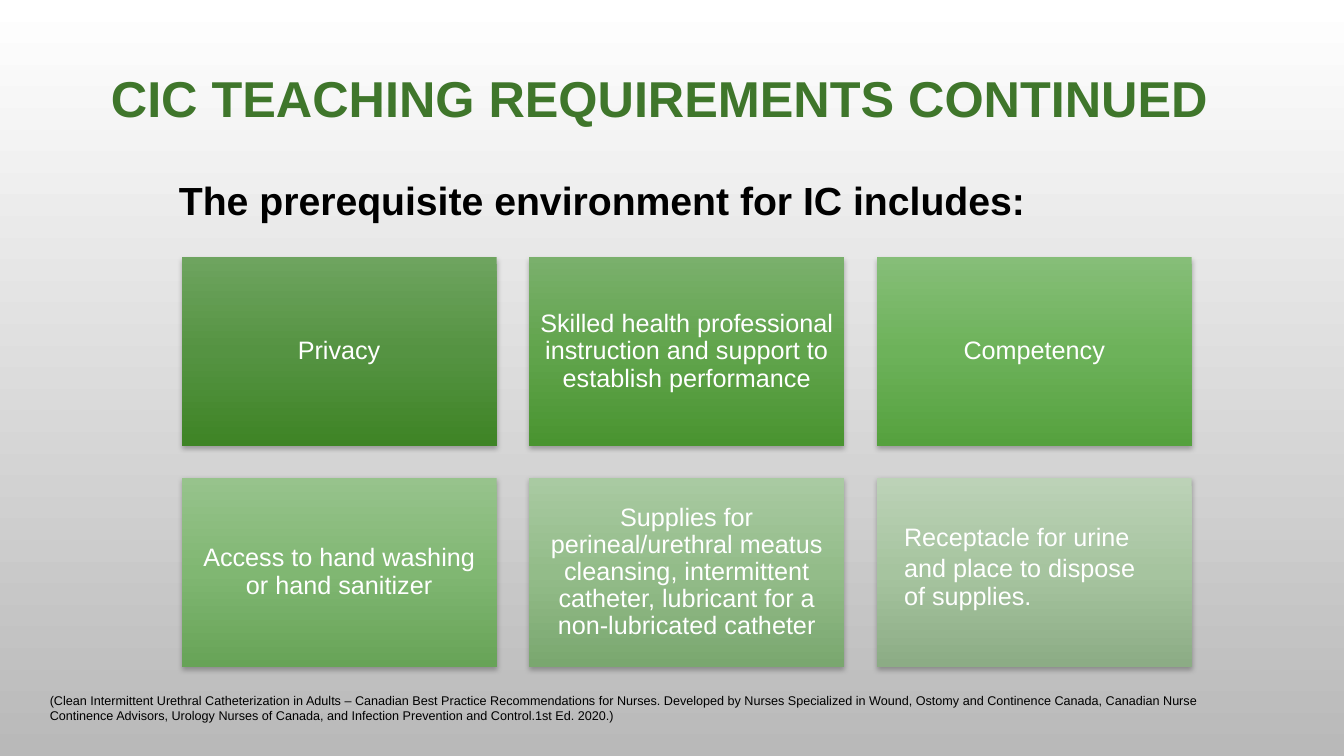
import copy

import lxml.etree
import pptx
import pptx.dml.color
import pptx.enum.shapes
import pptx.enum.text
import pptx.oxml.ns
import pptx.util

COLOURS = {
    "title": "3F762B",
    "text": "000000",
    "card_text": "FFFFFF",
    "background": ["FFFFFF", "B9B9B9"],
    "cards": [
        ["6EA45F", "559342", "3E8425"],
        ["7AB06C", "61A44C", "499430"],
        ["86BE78", "6DB25A", "55A13E"],
        ["97C38C", "80B772", "67A357"],
        ["A9CAA2", "93BC89", "7AA76F"],
        ["BCD2B7", "A6C49F", "8CAC85"],
    ],
}
CARD_TEXTS = [
    "Privacy",
    "Skilled health professional instruction and support to establish performance",
    "Competency",
    "Access to hand washing or hand sanitizer",
    "Supplies for perineal/urethral meatus cleansing, intermittent catheter, "
    "lubricant for a non-lubricated catheter",
    "Receptacle for urine\nand place to dispose of supplies.",
]
SOURCE = (
    "(Clean Intermittent Urethral Catheterization in Adults – Canadian Best Practice "
    "Recommendations for Nurses. Developed by Nurses Specialized in Wound, Ostomy and "
    "Continence Canada, Canadian Nurse Continence Advisors, Urology Nurses of Canada, "
    "and Infection Prevention and Control.1st Ed. 2020.)"
)
COLUMNS = 3
CARD_LEFT, CARD_TOP = 173, 245
CARD_WIDTH, CARD_HEIGHT = 300, 180
COLUMN_STEP, ROW_STEP = 331, 210
ALIGN = pptx.enum.text.PP_ALIGN
ANCHOR = pptx.enum.text.MSO_ANCHOR


def px(value):
    return pptx.util.Emu(value * 9525)


def rgb(colour):
    return pptx.dml.color.RGBColor.from_string(colour)


def write_text(frame, text, size, colour, font="Arial", bold=False, align=ALIGN.LEFT,
               anchor=ANCHOR.TOP, line_spacing=1.0, gap=0, insets=None):
    frame.word_wrap = True
    frame.auto_size = pptx.enum.text.MSO_AUTO_SIZE.NONE
    frame.vertical_anchor = anchor
    if insets:
        (frame.margin_left, frame.margin_top,
         frame.margin_right, frame.margin_bottom) = map(px, insets)
    frame.text = text
    for index, paragraph in enumerate(frame.paragraphs):
        paragraph.alignment = align
        paragraph.line_spacing = line_spacing
        paragraph.space_before = pptx.util.Pt(gap if index else 0)
        paragraph.font.name = font
        paragraph.font.size = pptx.util.Pt(size)
        paragraph.font.bold = bold
        paragraph.font.color.rgb = rgb(colour)


class SlideBuilder:
    def __init__(self, presentation, font="Arial"):
        self.font = font
        self.slide = presentation.slides.add_slide(presentation.slide_layouts[5])

    def gradient(self, fill, element, colours):
        fill.gradient()
        fill.gradient_angle = 270
        stop_list = next(element.iter(pptx.oxml.ns.qn("a:gsLst")))
        for _ in colours[2:]:
            stop_list.append(copy.deepcopy(stop_list[-1]))
        for index, (stop, colour) in enumerate(zip(fill.gradient_stops, colours)):
            stop.position = index / (len(colours) - 1)
            stop.color.rgb = rgb(colour)

    def shadow(self, shape):
        shape.shadow.inherit = False
        effects = shape._element.spPr.find(pptx.oxml.ns.qn("a:effectLst"))
        outer = lxml.etree.SubElement(
            effects, pptx.oxml.ns.qn("a:outerShdw"), blurRad="50800", dist="25400",
            dir="5400000", algn="ctr", rotWithShape="0")
        black = lxml.etree.SubElement(outer, pptx.oxml.ns.qn("a:srgbClr"), val="000000")
        lxml.etree.SubElement(black, pptx.oxml.ns.qn("a:alpha"), val="28000")

    def background(self, colours):
        self.gradient(self.slide.background.fill, self.slide._element, colours)

    def title(self, text, left, top, width, height, **style):
        title = self.slide.shapes.title
        title.left, title.top, title.width, title.height = map(px, (left, top, width, height))
        write_text(title.text_frame, text, font=self.font, **style)

    def text(self, text, left, top, width, height, **style):
        box = self.slide.shapes.add_textbox(*map(px, (left, top, width, height)))
        write_text(box.text_frame, text, font=self.font, **style)

    def card(self, text, left, top, width, height, colours, **style):
        card = self.slide.shapes.add_shape(
            pptx.enum.shapes.MSO_SHAPE.RECTANGLE, *map(px, (left, top, width, height)))
        self.gradient(card.fill, card._element, colours)
        card.line.fill.background()
        self.shadow(card)
        write_text(card.text_frame, text, font=self.font, size=18,
                   colour=COLOURS["card_text"], line_spacing=0.9, **style)


def main():
    presentation = pptx.Presentation()
    presentation.slide_width, presentation.slide_height = px(1280), px(720)
    builder = SlideBuilder(presentation)
    builder.background(COLOURS["background"])
    builder.title("CIC TEACHING REQUIREMENTS CONTINUED", 96, 65, 1088, 63, size=36,
                  colour=COLOURS["title"], bold=True, anchor=ANCHOR.MIDDLE, line_spacing=0.9)

    centred = {"align": ALIGN.CENTER, "anchor": ANCHOR.MIDDLE, "insets": (7, 7, 7, 7)}
    receptacle = {"gap": 2.7, "insets": (26, 45, 40, 7)}
    styles = [centred] * 5 + [receptacle]
    for index, (text, colours, style) in enumerate(zip(CARD_TEXTS, COLOURS["cards"], styles)):
        row, column = divmod(index, COLUMNS)
        builder.card(text, CARD_LEFT + column * COLUMN_STEP, CARD_TOP + row * ROW_STEP,
                     CARD_WIDTH, CARD_HEIGHT, colours, **style)

    builder.text(SOURCE, 38, 655, 1138, 38, size=9, colour=COLOURS["text"])
    builder.text("The prerequisite environment for IC includes:", 161, 163, 907, 55,
                 size=28, colour=COLOURS["text"], bold=True)
    presentation.save("out.pptx")


if __name__ == "__main__":
    main()
